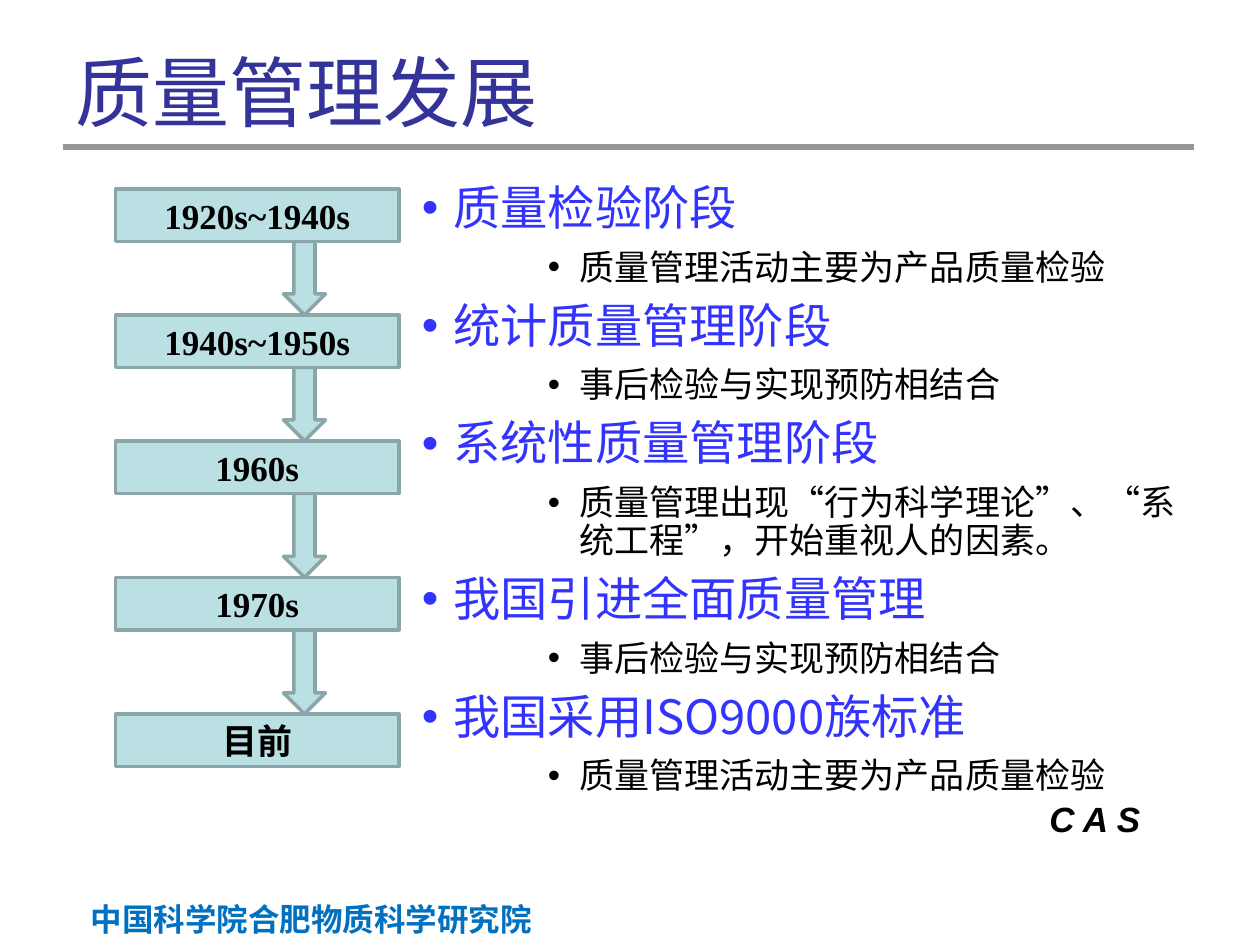
from lxml.etree import SubElement
from pptx import Presentation
from pptx.dml.color import RGBColor
from pptx.enum.shapes import MSO_CONNECTOR as Connector, MSO_SHAPE as Shape
from pptx.enum.text import MSO_ANCHOR as Anchor, PP_ALIGN as Align
from pptx.oxml.ns import qn
from pptx.util import Pt

COLORS = {
    "title": "333399", "stage": "3333FF", "text": "000000", "footer": "0070C0",
    "rule": "969696", "fill": "BBE0E3", "outline": "8AA6A8",
}
SANS = "Noto Sans CJK SC"
STAGES = [
    ("1920s~1940s", 108, "质量检验阶段", "质量管理活动主要为产品质量检验"),
    ("1940s~1950s", 180, "统计质量管理阶段", "事后检验与实现预防相结合"),
    ("1960s", 252, "系统性质量管理阶段",
     "质量管理出现“行为科学理论”、“系统工程”，开始重视人的因素。"),
    ("1970s", 330, "我国引进全面质量管理", "事后检验与实现预防相结合"),
    ("目前", 408, "我国采用ISO9000族标准", "质量管理活动主要为产品质量检验"),
]
BOX_LEFT, BOX_WIDTH, BOX_HEIGHT = 66, 162, 30
ARROW_LEFT, ARROW_WIDTH = 162, 24
STAGE_FORMAT = {"size": 27, "color_name": "stage", "indent": 54}
DETAIL_FORMAT = {"size": 20, "color_name": "text", "indent": 126}


def color(name):
    return RGBColor.from_string(COLORS[name])


def set_attributes(target, values):
    for name, value in values.items():
        setattr(target, name, value)


def write_run(paragraph, text, size, color_name, font=SANS, east_asian=SANS, **styles):
    run = paragraph.add_run()
    run.text = text
    set_attributes(run.font, {"size": Pt(size), "name": font, **styles})
    run.font.color.rgb = color(color_name)
    SubElement(run.font._element, qn("a:ea"), typeface=east_asian)


def add_text_box(slide, left, top, width, height, wrap=True):
    shape = slide.shapes.add_textbox(Pt(left), Pt(top), Pt(width), Pt(height))
    shape.text_frame.word_wrap = wrap
    return shape.text_frame


def add_title(slide, text):
    title = slide.shapes.title
    set_attributes(title, {"left": Pt(36), "top": Pt(21.6), "width": Pt(414), "height": Pt(90)})
    title.text_frame.vertical_anchor = Anchor.TOP
    paragraph = title.text_frame.paragraphs[0]
    paragraph.alignment = Align.LEFT
    write_run(paragraph, text, 44, "title", "Noto Sans CJK JP", "Noto Sans CJK JP")


def add_rule(slide):
    rule = slide.shapes.add_connector(Connector.STRAIGHT, Pt(36), Pt(84), Pt(682.5), Pt(84))
    rule.line.color.rgb = color("rule")
    rule.line.width = Pt(3.6)
    SubElement(rule._element.spPr, qn("a:effectLst"))


def add_bullet(paragraph, text, size, color_name, indent, is_first=False):
    properties = paragraph._p.get_or_add_pPr()
    properties.set("marL", str(Pt(indent)))
    properties.set("indent", str(Pt(-18)))
    SubElement(properties, qn("a:buFont"), typeface="Arial")
    SubElement(properties, qn("a:buChar"), char="•")
    set_attributes(paragraph, {
        "line_spacing": 0.9,
        "space_before": Pt(0 if is_first else 0.2 * size),
        "space_after": Pt(0.15 * size),
    })
    write_run(paragraph, text, size, color_name)


def add_stage_list(slide):
    frame = add_text_box(slide, 198, 102, 486, 368)
    for index, (_, _, stage, detail) in enumerate(STAGES):
        paragraph = frame.add_paragraph() if index else frame.paragraphs[0]
        add_bullet(paragraph, stage, **STAGE_FORMAT, is_first=index == 0)
        add_bullet(frame.add_paragraph(), detail, **DETAIL_FORMAT)


def add_block(slide, kind, left, top, width, height):
    shape = slide.shapes.add_shape(kind, Pt(left), Pt(top), Pt(width), Pt(height))
    shape.shadow.inherit = False
    shape.fill.solid()
    shape.fill.fore_color.rgb = color("fill")
    shape.line.color.rgb = color("outline")
    shape.line.width = Pt(2)
    return shape


def add_timeline(slide):
    tops = [top for _, top, _, _ in STAGES]
    for top, next_top in zip(tops, tops[1:]):
        start = top + BOX_HEIGHT
        add_block(slide, Shape.DOWN_ARROW, ARROW_LEFT, start, ARROW_WIDTH, next_top - start)
    for period, top, _, _ in STAGES:
        box = add_block(slide, Shape.RECTANGLE, BOX_LEFT, top, BOX_WIDTH, BOX_HEIGHT)
        box.text_frame.vertical_anchor = Anchor.MIDDLE
        paragraph = box.text_frame.paragraphs[0]
        paragraph.alignment = Align.CENTER
        write_run(paragraph, period, 20, "text", "Times New Roman", bold=True)


def add_footer(slide):
    institute = add_text_box(slide, 42.5, 511, 268.5, 29).paragraphs[0]
    institute.alignment = Align.RIGHT
    write_run(institute, "中国科学院合肥物质科学研究院", 18, "footer", "Arial", bold=True)
    initials = add_text_box(slide, 592.5, 452, 68, 31, wrap=False).paragraphs[0]
    write_run(initials, "C A S", 20, "text", "Arial", bold=True, italic=True)


def main():
    presentation = Presentation()
    set_attributes(presentation, {"slide_width": Pt(720), "slide_height": Pt(540)})
    slide = presentation.slides.add_slide(presentation.slide_layouts[5])
    add_rule(slide)
    add_footer(slide)
    add_title(slide, "质量管理发展")
    add_stage_list(slide)
    add_timeline(slide)
    presentation.save("out.pptx")


if __name__ == "__main__":
    main()
